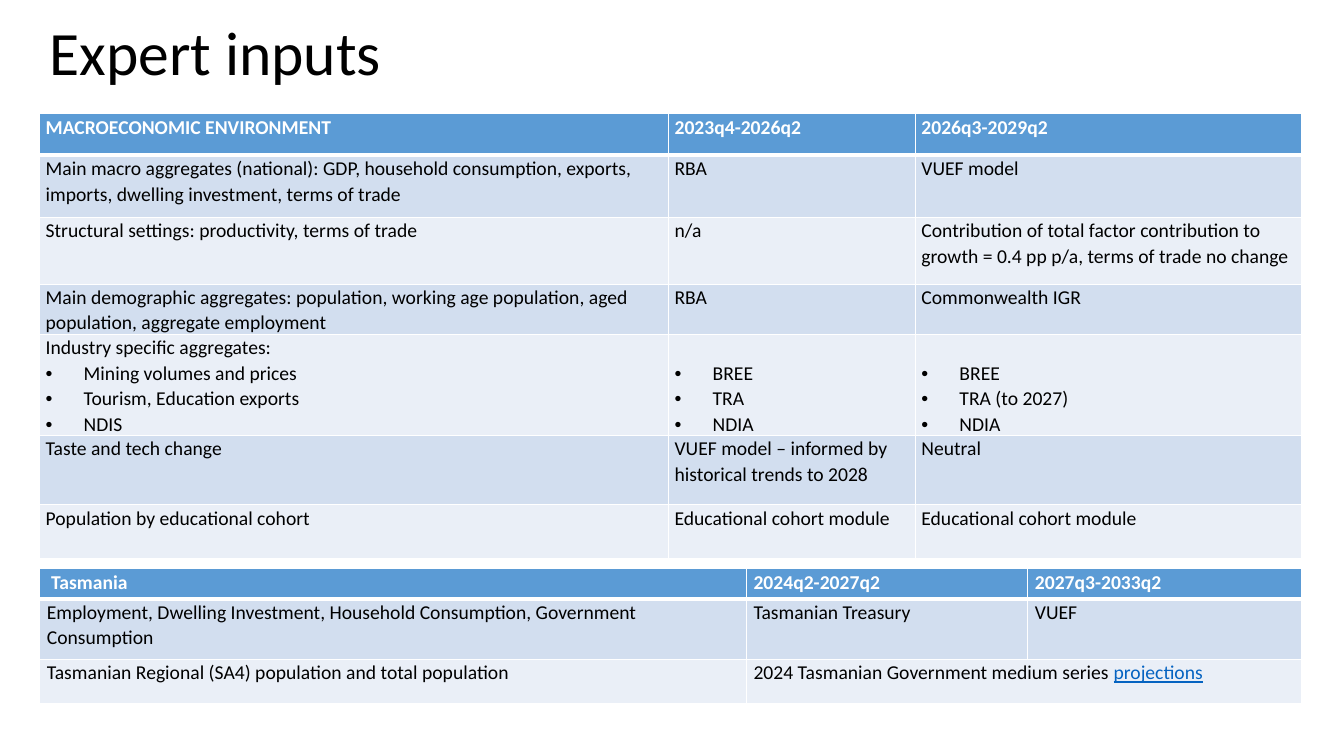
"""Build the "Expert inputs" slide with its two forecast source tables."""
from dataclasses import dataclass

from lxml import etree
from pptx import Presentation
from pptx.dml.color import RGBColor
from pptx.enum.text import MSO_ANCHOR
from pptx.oxml.ns import qn
from pptx.util import Cm, Pt

MIDDLE = MSO_ANCHOR.MIDDLE
TOP = MSO_ANCHOR.TOP
FONT = "Calibri"
WHITE, BLACK, LINK = "FFFFFF", "000000", "0563C1"
HEADER_FILL = "5B9BD5"
BAND_FILLS = ("EAEFF7", "D2DEEF")
LINE_SPACING = 1.07
LINE_HEIGHT = 0.64
BULLET_INDENT = 0.96


@dataclass
class Entry:
    text: str = ""
    bullets: tuple[str, ...] = ()
    link: str = ""
    span: int = 1
    indent: float = 0


@dataclass
class Grid:
    top: float
    columns: tuple[float, ...]
    heights: tuple[float, ...]
    side_margin: float
    rows: list[list[Entry]]


TASMANIA = Grid(
    14.33, (17.81, 7.09, 6.9), (0.76, 1.52, 1.12), 0.18,
    [
        [Entry("Tasmania", indent=0.11), Entry("2024q2-2027q2"), Entry("2027q3-2033q2")],
        [
            Entry("Employment, Dwelling Investment, Household Consumption, Government Consumption"),
            Entry("Tasmanian Treasury"),
            Entry("VUEF"),
        ],
        [
            Entry("Tasmanian Regional (SA4) population and total population"),
            Entry("2024 Tasmanian Government medium series ", link="projections", span=2),
        ],
    ],
)

MACRO = Grid(
    2.87, (15.85, 6.22, 9.73), (1.04, 1.57, 1.68, 1.19, 2.39, 1.75, 1.35), 0.15,
    [
        [Entry("MACROECONOMIC ENVIRONMENT"), Entry("2023q4-2026q2"), Entry("2026q3-2029q2")],
        [
            Entry("Main macro aggregates (national): GDP, household consumption, exports, "
                  "imports, dwelling investment, terms of trade"),
            Entry("RBA"),
            Entry("VUEF model"),
        ],
        [
            Entry("Structural settings: productivity, terms of trade"),
            Entry("n/a"),
            Entry("Contribution of total factor contribution to growth = 0.4 pp p/a, "
                  "terms of trade no change"),
        ],
        [
            Entry("Main demographic aggregates: population, working age population, "
                  "aged population, aggregate employment"),
            Entry("RBA"),
            Entry("Commonwealth IGR"),
        ],
        [
            Entry("Industry specific aggregates:",
                  ("Mining volumes and prices", "Tourism, Education exports", "NDIS")),
            Entry(bullets=("BREE", "TRA", "NDIA")),
            Entry(bullets=("BREE", "TRA (to 2027)", "NDIA")),
        ],
        [
            Entry("Taste and tech change"),
            Entry("VUEF model – informed by historical trends to 2028"),
            Entry("Neutral"),
        ],
        [
            Entry("Population by educational cohort"),
            Entry("Educational cohort module"),
            Entry("Educational cohort module"),
        ],
    ],
)


def color(value: str) -> RGBColor:
    return RGBColor.from_string(value)


def style_paragraph(paragraph, size: float, text_color: str, spacing: float, bold: bool = False) -> None:
    paragraph.line_spacing = spacing
    font = paragraph.font
    font.name, font.size, font.bold = FONT, Pt(size), bold
    font.color.rgb = color(text_color)


def add_bullet(paragraph) -> None:
    properties = paragraph._p.get_or_add_pPr()
    properties.set("marL", str(Cm(BULLET_INDENT)))
    properties.set("indent", str(-Cm(BULLET_INDENT)))
    bullet_font = etree.Element(qn("a:buFont"), typeface="Arial")
    bullet = etree.Element(qn("a:buChar"), char="•")
    spacing = properties.find(qn("a:lnSpc"))
    spacing.addnext(bullet_font)
    bullet_font.addnext(bullet)


def set_borders(cell, top: float, bottom: float) -> None:
    properties = cell._tc.get_or_add_tcPr()
    sides = (("a:lnL", 1), ("a:lnR", 1), ("a:lnT", top), ("a:lnB", bottom))
    for position, (side, width) in enumerate(sides):
        line = etree.Element(qn(side), w=str(Pt(width)))
        fill = etree.SubElement(line, qn("a:solidFill"))
        etree.SubElement(fill, qn("a:srgbClr"), val=WHITE)
        properties.insert(position, line)


def fill_cell(cell, entry: Entry, row: int, side_margin: float) -> None:
    header = row == 0
    cell.margin_left = Cm(side_margin + entry.indent)
    cell.margin_right = Cm(side_margin)
    cell.margin_top = Cm(0 if entry.text else LINE_HEIGHT)
    cell.margin_bottom = Cm(0)
    cell.vertical_anchor = TOP
    cell.fill.solid()
    cell.fill.fore_color.rgb = color(HEADER_FILL if header else BAND_FILLS[row % 2])
    set_borders(cell, 3 if row == 1 else 1, 3 if header else 1)

    lines = ((entry.text,) if entry.text else ()) + entry.bullets
    frame = cell.text_frame
    for index, line in enumerate(lines):
        paragraph = frame.add_paragraph() if index else frame.paragraphs[0]
        paragraph.add_run().text = line
        style_paragraph(paragraph, 14, WHITE if header else BLACK, LINE_SPACING, header)
        if line in entry.bullets:
            add_bullet(paragraph)
    if entry.link:
        span = frame.paragraphs[0].add_run()
        span.text = entry.link
        span.font.underline = True
        span.font.color.rgb = color(LINK)


def add_grid(page, grid: Grid) -> None:
    table = page.shapes.add_table(
        len(grid.rows), len(grid.columns), Cm(1), Cm(grid.top),
        Cm(sum(grid.columns)), Cm(sum(grid.heights)),
    ).table
    table.first_row = table.horz_banding = False
    for column, width in zip(table.columns, grid.columns):
        column.width = Cm(width)
    for table_row, height in zip(table.rows, grid.heights):
        table_row.height = Cm(height)
    for row, entries in enumerate(grid.rows):
        for column, entry in enumerate(entries):
            cell = table.cell(row, column)
            if entry.span > 1:
                cell.merge(table.cell(row, column + entry.span - 1))
            fill_cell(cell, entry, row, grid.side_margin)


def add_title(page, text: str) -> None:
    box = page.shapes.add_textbox(Cm(1), Cm(0.28), Cm(12), Cm(2.26))
    frame = box.text_frame
    frame.word_wrap = True
    frame.vertical_anchor = MIDDLE
    paragraph = frame.paragraphs[0]
    paragraph.add_run().text = text
    style_paragraph(paragraph, 44, BLACK, 0.9)


def main() -> None:
    deck = Presentation()
    deck.slide_width, deck.slide_height = Cm(33.87), Cm(19.05)
    page = deck.slides.add_slide(deck.slide_layouts[6])
    add_title(page, "Expert inputs")
    for grid in (TASMANIA, MACRO):
        add_grid(page, grid)
    deck.save("out.pptx")


if __name__ == "__main__":
    main()
